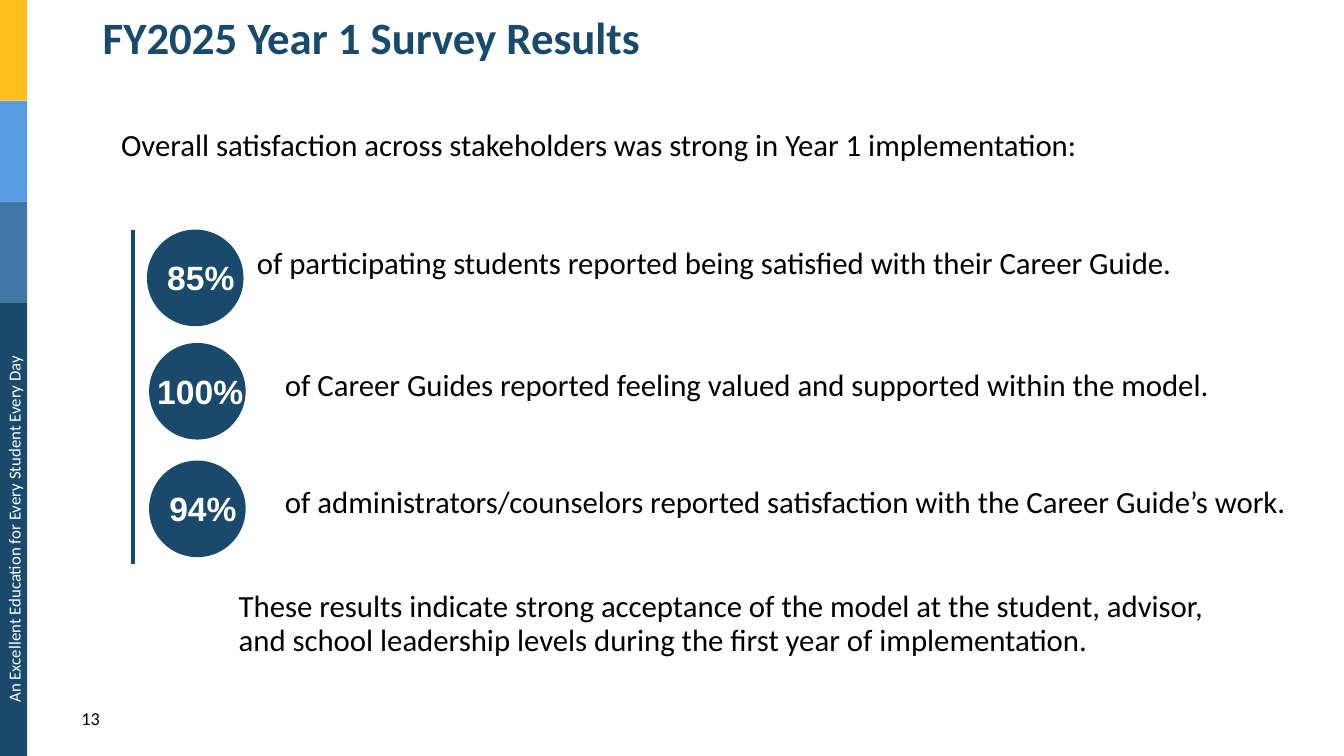
from dataclasses import dataclass

from lxml import etree
from pptx import Presentation
from pptx.dml.color import RGBColor
from pptx.enum.shapes import MSO_CONNECTOR, MSO_SHAPE
from pptx.enum.text import MSO_ANCHOR, PP_ALIGN
from pptx.oxml.ns import qn
from pptx.util import Pt

RECT, OVAL = MSO_SHAPE.RECTANGLE, MSO_SHAPE.OVAL
STRAIGHT = MSO_CONNECTOR.STRAIGHT
MIDDLE = MSO_ANCHOR.MIDDLE
LEFT, CENTER, RIGHT = PP_ALIGN.LEFT, PP_ALIGN.CENTER, PP_ALIGN.RIGHT

COLORS = {
    "navy": "194A6B",
    "steel": "3F78A7",
    "sky": "589CE3",
    "gold": "FFBF20",
    "white": "FFFFFF",
    "black": "000000",
}
BADGE = 69
LABEL_W, LABEL_H = 77, 36
BAND_W = 19.4
RIGHT_EDGE = 950


@dataclass
class Band:
    color: str
    top: float
    height: float


@dataclass
class Finding:
    percent: str
    text: str
    badge_x: float
    badge_y: float
    label_x: float
    text_x: float
    text_mid: float


BANDS = [
    Band("gold", 0, 72),
    Band("sky", 72, 72),
    Band("steel", 144, 72),
    Band("navy", 216, 324),
]
FINDINGS = [
    Finding("85%", "of participating students reported being satisfied with their Career Guide.",
            105, 164, 105, 183.5, 189),
    Finding("100%", "of Career Guides reported feeling valued and supported within the model.",
            106.5, 245, 104.5, 203.5, 276),
    Finding("94%", "of administrators/counselors reported satisfaction with the Career Guide’s work.",
            106.5, 329, 106.5, 203.5, 359.5),
]
CONCLUSION = [
    "These results indicate strong acceptance of the model at the student, advisor,",
    "and school leadership levels during the first year of implementation.",
]


def rgb(name: str) -> RGBColor:
    return RGBColor.from_string(COLORS[name])


def add_run(p, text: str, size: float, color: str, font: str = "Calibri", bold: bool = False) -> None:
    r = p.add_run()
    r.text = text
    r.font.name, r.font.size, r.font.bold = font, Pt(size), bold
    r.font.color.rgb = rgb(color)


def add_shape(s, kind, x: float, y: float, w: float, h: float, color: str) -> None:
    sp = s.shapes.add_shape(kind, Pt(x), Pt(y), Pt(w), Pt(h))
    sp.shadow.inherit = False
    sp.fill.solid()
    sp.fill.fore_color.rgb = rgb(color)
    sp.line.fill.background()


def add_text(s, lines: list[str], x: float, y: float, w: float, h: float, size: float,
             color: str = "black", align=LEFT, font: str = "Calibri",
             bold: bool = False, spacing: float = 1.0):
    sp = s.shapes.add_textbox(Pt(x), Pt(y), Pt(w), Pt(h))
    tf = sp.text_frame
    tf.word_wrap = True
    tf.vertical_anchor = MIDDLE
    tf.margin_left = tf.margin_right = tf.margin_top = tf.margin_bottom = 0
    p = tf.paragraphs[0]
    p.alignment, p.line_spacing = align, spacing
    for i, line in enumerate(lines):
        if i:
            p.add_line_break()
        add_run(p, line, size, color, font, bold)
    return sp


def add_body(s, lines: list[str], x: float, mid: float) -> None:
    h = 30 * len(lines)
    add_text(s, lines, x, mid - h / 2, RIGHT_EDGE - x, h, 22, spacing=0.9)


def add_finding(s, f: Finding) -> None:
    add_shape(s, OVAL, f.badge_x, f.badge_y, BADGE, BADGE, "navy")
    label_y = f.badge_y + (BADGE - LABEL_H) / 2 - 0.5
    add_text(s, [f.percent], f.label_x, label_y, LABEL_W, LABEL_H, 24, "white",
             CENTER, "Arial", True)
    add_body(s, [f.text], f.text_x, f.text_mid)


def main() -> None:
    prs = Presentation()
    prs.slide_width, prs.slide_height = Pt(960), Pt(540)
    s = prs.slides.add_slide(prs.slide_layouts[5])

    # Side bands with the rotated motto
    for band in BANDS:
        add_shape(s, RECT, 0, band.top, BAND_W, band.height, band.color)
    motto = add_text(s, ["An Excellent Education for Every Student Every Day"],
                     -152, 367.2, 324, 21.6, 12, "white", CENTER)
    motto.rotation = 270

    # Title
    title = s.shapes.title
    title.left, title.top, title.width, title.height = Pt(66.2), Pt(1.4), Pt(828), Pt(54.7)
    tf = title.text_frame
    tf.vertical_anchor = MIDDLE
    p = tf.paragraphs[0]
    p.alignment, p.line_spacing = LEFT, 0.9
    add_run(p, "FY2025 Year 1 Survey Results", 32, "navy", bold=True)

    # Introduction, findings and conclusion
    add_body(s, ["Overall satisfaction across stakeholders was strong in Year 1 implementation:"],
             86.5, 105)
    for finding in FINDINGS:
        add_finding(s, finding)
    add_body(s, CONCLUSION, 170.5, 446)

    # Vertical rule beside the badges
    rule = s.shapes.add_connector(STRAIGHT, Pt(95), Pt(164), Pt(95), Pt(403.2))
    rule.line.color.rgb = rgb("navy")
    rule.line.width = Pt(3)
    etree.SubElement(rule.element.spPr, qn("a:effectLst"))

    # Slide number
    add_text(s, ["13"], 28, 504, 43.3, 18, 13, align=RIGHT)

    prs.save("out.pptx")


if __name__ == "__main__":
    main()
